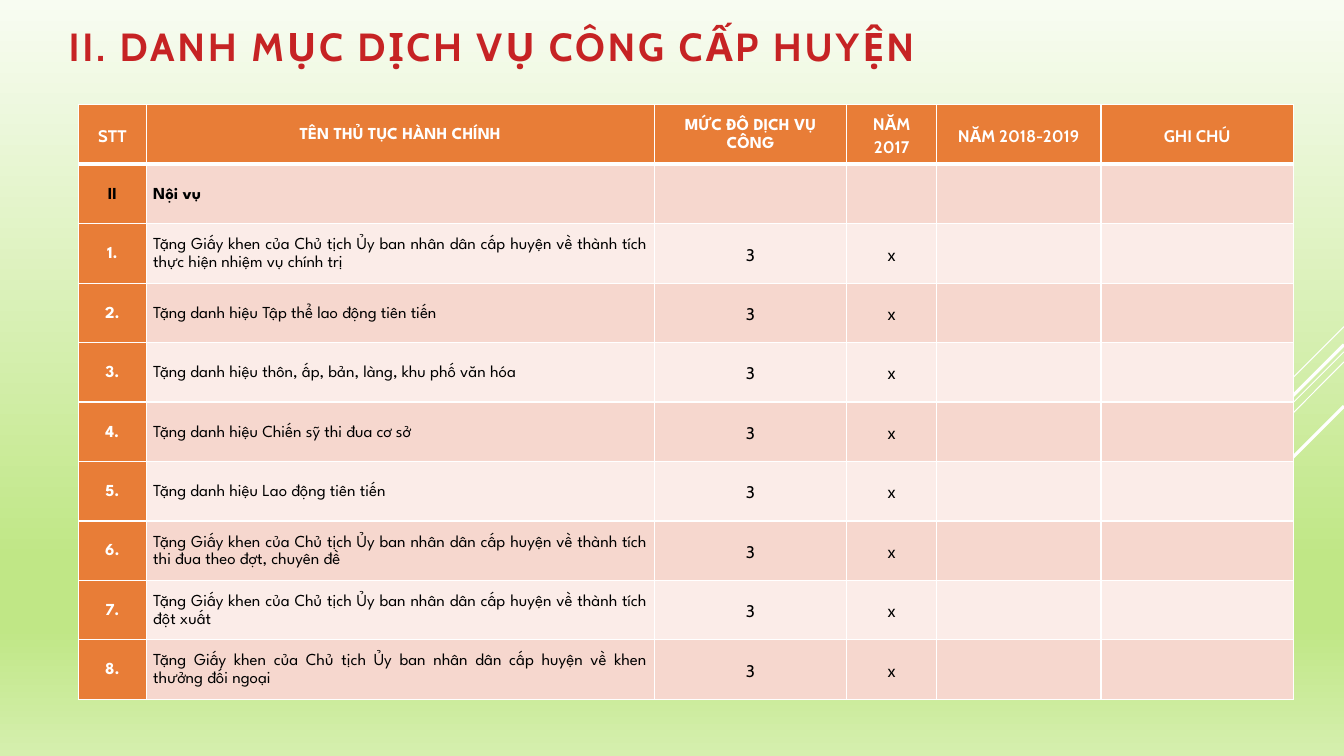
from lxml import etree
from pptx import Presentation
from pptx.dml.color import RGBColor
from pptx.enum.shapes import MSO_CONNECTOR
from pptx.enum.text import MSO_ANCHOR, MSO_AUTO_SIZE, PP_ALIGN
from pptx.oxml.ns import qn
from pptx.util import Inches, Pt

COLORS = {
    "title": "C62324",
    "accent": "E87D37",
    "band_dark": "F6D7CE",
    "band_light": "FBECE8",
    "white": "FFFFFF",
    "black": "000000",
}
BACKGROUND_STOPS = [(0, "F8FCF2"), (74, "C0E786"), (83, "C0E786"), (100, "D5EFAE")]
HEADING_FONT, LIST_FONT = "Cabin", "League Spartan"

# start x, start y, end x, end y, width in points
DIAGONALS = [
    (13.33, 3.24, 12.33, 4.24, 0.75),
    (13.33, 3.49, 10.07, 6.75, 0.75),
    (13.33, 3.59, 11.26, 5.67, 0.75),
    (13.33, 3.42, 11.42, 5.33, 2.25),
    (13.33, 4.03, 11.94, 5.42, 2.25),
]

COLUMN_WIDTHS = [0.67, 5.04, 1.91, 0.89, 1.63, 1.91]
ROW_HEIGHT = 0.59
HEADERS = [
    ("STT", HEADING_FONT),
    ("TÊN THỦ TỤC HÀNH CHÍNH", LIST_FONT),
    ("MỨC ĐỘ DỊCH VỤ CÔNG", LIST_FONT),
    ("NĂM 2017", HEADING_FONT),
    ("NĂM 2018-2019", HEADING_FONT),
    ("GHI CHÚ", HEADING_FONT),
]
SECTION = ("II", "Nội vụ")
PROCEDURES = [
    "Tặng Giấy khen của Chủ tịch Ủy ban nhân dân cấp huyện về thành tích thực hiện nhiệm vụ chính trị",
    "Tặng danh hiệu Tập thể lao động tiên tiến",
    "Tặng danh hiệu thôn, ấp, bản, làng, khu phố văn hóa",
    "Tặng danh hiệu Chiến sỹ thi đua cơ sở",
    "Tặng danh hiệu Lao động tiên tiến",
    "Tặng Giấy khen của Chủ tịch Ủy ban nhân dân cấp huyện về thành tích thi đua theo đợt, chuyên đề",
    "Tặng Giấy khen của Chủ tịch Ủy ban nhân dân cấp huyện về thành tích đột xuất",
    "Tặng Giấy khen của Chủ tịch Ủy ban nhân dân cấp huyện về khen thưởng đối ngoại",
]
SERVICE_LEVEL, DONE_MARK = "3", "x"


def rgb(name):
    return RGBColor.from_string(COLORS[name])


class SlideBuilder:
    def __init__(self, presentation):
        self.slide = presentation.slides.add_slide(presentation.slide_layouts[5])

    def background(self, stops):
        fill = self.slide.background.fill
        fill.gradient()
        fill.gradient_angle = 270
        stop_list = next(self.slide.element.iter(qn("a:gsLst")))
        for old_stop in list(stop_list):
            stop_list.remove(old_stop)
        for percent, color in stops:
            stop = etree.SubElement(stop_list, qn("a:gs"), pos=str(percent * 1000))
            etree.SubElement(stop, qn("a:srgbClr"), val=color)

    def line(self, start_x, start_y, end_x, end_y, width):
        connector = self.slide.shapes.add_connector(
            MSO_CONNECTOR.STRAIGHT,
            Inches(start_x), Inches(start_y), Inches(end_x), Inches(end_y),
        )
        connector.line.color.rgb = rgb("white")
        connector.line.width = Pt(width)
        properties = connector.element.find(qn("p:spPr"))
        etree.SubElement(properties, qn("a:effectLst"))

    def title(self, text, left, top, width, height):
        title = self.slide.shapes.title
        title.left, title.top = Inches(left), Inches(top)
        title.width, title.height = Inches(width), Inches(height)
        frame = title.text_frame
        frame.text = text
        frame.word_wrap = True
        frame.auto_size = MSO_AUTO_SIZE.NONE
        frame.vertical_anchor = MSO_ANCHOR.MIDDLE
        paragraph = frame.paragraphs[0]
        paragraph.alignment = PP_ALIGN.LEFT
        paragraph.line_spacing = 0.9
        self.font(paragraph, HEADING_FONT, 28, "title", True)
        paragraph.runs[0].font.language_id = None
        paragraph.runs[0].font._element.set("spc", "200")

    def font(self, paragraph, name, size, color, bold):
        font = paragraph.font
        font.name, font.size, font.bold = name, Pt(size), bold
        font.color.rgb = rgb(color)

    def table(self, left, top, column_widths, row_height, row_count):
        table = self.slide.shapes.add_table(
            row_count, len(column_widths), Inches(left), Inches(top),
            Inches(sum(column_widths)), Inches(row_height * row_count),
        ).table
        table.horz_banding = False
        for column, width in zip(table.columns, column_widths):
            column.width = Inches(width)
        for row_index, row in enumerate(table.rows):
            row.height = Inches(row_height)
            band = "band_dark" if row_index % 2 else "band_light"
            for column_index, cell in enumerate(row.cells):
                accented = row_index == 0 or column_index == 0
                cell.fill.solid()
                cell.fill.fore_color.rgb = rgb("accent" if accented else band)
                self.borders(
                    cell,
                    top_width=3 if row_index == 1 else 1,
                    bottom_width=3 if row_index == 0 else 1,
                )
        return table

    def borders(self, cell, top_width, bottom_width):
        """Put white borders before the fill, as the schema orders them."""
        properties = cell._tc.get_or_add_tcPr()
        widths = {"a:lnL": 1, "a:lnR": 1, "a:lnT": top_width, "a:lnB": bottom_width}
        for position, (tag, width) in enumerate(widths.items()):
            border = etree.Element(qn(tag), w=str(Pt(width)))
            fill = etree.SubElement(border, qn("a:solidFill"))
            etree.SubElement(fill, qn("a:srgbClr"), val=COLORS["white"])
            properties.insert(position, border)

    def cell_text(self, cell, text, font, color="black", bold=False,
                  alignment=PP_ALIGN.CENTER, spacing=0):
        cell.text = text
        cell.vertical_anchor = MSO_ANCHOR.MIDDLE
        cell.margin_left = cell.margin_right = Inches(0.07)
        cell.margin_top = cell.margin_bottom = 0
        paragraph = cell.text_frame.paragraphs[0]
        paragraph.alignment = alignment
        paragraph.line_spacing = 1.15
        paragraph.space_before = paragraph.space_after = Pt(spacing)
        self.font(paragraph, font, 12, color, bold)


def main():
    presentation = Presentation()
    presentation.slide_width, presentation.slide_height = Inches(13.33), Inches(7.5)
    builder = SlideBuilder(presentation)
    builder.background(BACKGROUND_STOPS)
    for diagonal in DIAGONALS:
        builder.line(*diagonal)
    builder.title("II. DANH MỤC DỊCH VỤ CÔNG CẤP HUYỆN", 0.58, 0.22, 11.13, 0.53)

    table = builder.table(0.78, 1.04, COLUMN_WIDTHS, ROW_HEIGHT, len(PROCEDURES) + 2)
    for column, (text, font) in enumerate(HEADERS):
        builder.cell_text(table.cell(0, column), text, font, "white", True)

    number, name = SECTION
    builder.cell_text(table.cell(1, 0), number, LIST_FONT, bold=True, spacing=6)
    builder.cell_text(table.cell(1, 1), name, LIST_FONT, bold=True,
                      alignment=PP_ALIGN.JUSTIFY, spacing=6)

    for index, procedure in enumerate(PROCEDURES, start=1):
        row = index + 1
        builder.cell_text(table.cell(row, 0), f"{index}.", LIST_FONT, "white", True, spacing=6)
        builder.cell_text(table.cell(row, 1), procedure, LIST_FONT,
                          alignment=PP_ALIGN.JUSTIFY, spacing=6)
        builder.cell_text(table.cell(row, 2), SERVICE_LEVEL, HEADING_FONT)
        builder.cell_text(table.cell(row, 3), DONE_MARK, HEADING_FONT)
    presentation.save("out.pptx")


if __name__ == "__main__":
    main()
